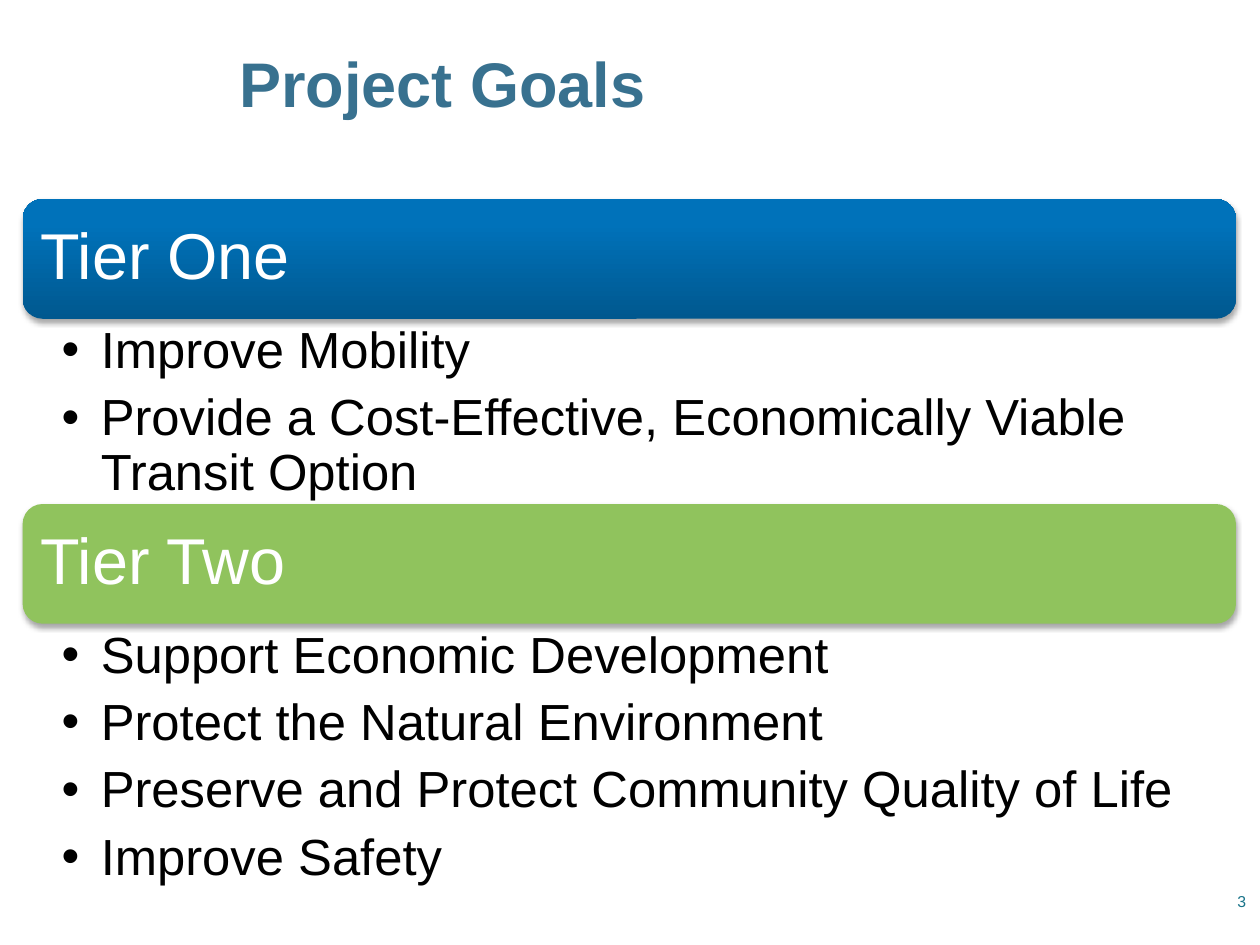
from copy import deepcopy
from dataclasses import dataclass

from lxml import etree
from pptx import Presentation
from pptx.dml.color import RGBColor
from pptx.enum.shapes import MSO_SHAPE
from pptx.enum.text import MSO_ANCHOR, MSO_AUTO_SIZE, PP_ALIGN
from pptx.oxml import parse_xml
from pptx.oxml.ns import nsdecls, qn
from pptx.util import Inches, Pt

COLORS = {
    "title": "38718F",
    "number": "19748A",
    "blue_dark": "00588F",
    "blue_mid": "0072BA",
    "blue": "0073BB",
    "green": "90C35D",
    "white": "FFFFFF",
    "black": "000000",
}
LEFT, WIDTH, BAR_HEIGHT = 0.18, 9.63, 0.95


@dataclass
class Tier:
    name: str
    top: float
    list_height: float
    fill: list[tuple[float, str]]
    goals: list[str]


TIERS = [
    Tier("Tier One", 1.58, 1.47,
         [(0, "blue_dark"), (0.8, "blue_mid"), (1, "blue")],
         ["Improve Mobility",
          "Provide a Cost-Effective, Economically Viable Transit Option"]),
    Tier("Tier Two", 4, 2.05, [(0, "green")],
         ["Support Economic Development",
          "Protect the Natural Environment",
          "Preserve and Protect Community Quality of Life",
          "Improve Safety"]),
]


def rgb(name: str) -> RGBColor:
    return RGBColor.from_string(COLORS[name])


def place(sp, left: float, top: float, width: float, height: float) -> None:
    sp.left, sp.top = Inches(left), Inches(top)
    sp.width, sp.height = Inches(width), Inches(height)


def set_frame(tf, anchor, left: float, top: float, right: float, bottom: float) -> None:
    tf.word_wrap = True
    tf.auto_size = MSO_AUTO_SIZE.NONE
    tf.vertical_anchor = anchor
    tf.margin_left, tf.margin_top = Inches(left), Inches(top)
    tf.margin_right, tf.margin_bottom = Inches(right), Inches(bottom)


def set_text(p, text: str, size: float, color: str, align=PP_ALIGN.LEFT, bold=False) -> None:
    p.text = text
    p.alignment = align
    for r in p.runs:
        r.font.name = "Arial"
        r.font.size = Pt(size)
        r.font.bold = bold
        r.font.color.rgb = rgb(color)


def fill_bar(sp, stops: list[tuple[float, str]]) -> None:
    if len(stops) == 1:
        sp.fill.solid()
        sp.fill.fore_color.rgb = rgb(stops[0][1])
        return
    sp.fill.gradient()
    sp.fill.gradient_angle = 90
    gs_list = sp._element.spPr.find(qn("a:gradFill")).find(qn("a:gsLst"))
    for _ in stops[2:]:
        gs_list.append(deepcopy(gs_list[-1]))
    for gs, (position, color) in zip(sp.fill.gradient_stops, stops):
        gs.position = position
        gs.color.rgb = rgb(color)


def add_shadow(sp) -> None:
    sp.shadow.inherit = False
    effects = sp._element.spPr.find(qn("a:effectLst"))
    effects.append(parse_xml(
        f'<a:outerShdw {nsdecls("a")} blurRad="{Pt(3.1)}" dist="{Pt(1.8)}" '
        f'dir="5400000" rotWithShape="0"><a:srgbClr val="{COLORS["black"]}">'
        '<a:alpha val="35000"/></a:srgbClr></a:outerShdw>'))


def add_bar(s, tier: Tier) -> None:
    sp = s.shapes.add_shape(MSO_SHAPE.ROUNDED_RECTANGLE, Inches(LEFT), Inches(tier.top),
                            Inches(WIDTH), Inches(BAR_HEIGHT))
    fill_bar(sp, tier.fill)
    sp.line.fill.background()
    add_shadow(sp)
    set_frame(sp.text_frame, MSO_ANCHOR.MIDDLE, 0.1, 0.1, 0.1, 0.1)
    p = sp.text_frame.paragraphs[0]
    set_text(p, tier.name, 37, "white")
    p.line_spacing = 0.9


def fill_list(sp, tier: Tier) -> None:
    place(sp, LEFT, tier.top + BAR_HEIGHT, WIDTH, tier.list_height)
    tf = sp.text_frame
    set_frame(tf, MSO_ANCHOR.TOP, 0.31, 0.05, 0.29, 0.05)
    for i, goal in enumerate(tier.goals):
        p = tf.add_paragraph() if i else tf.paragraphs[0]
        p.level = 1
        pPr = p._p.get_or_add_pPr()
        pPr.set("marL", str(Inches(0.31)))
        pPr.set("indent", str(-Inches(0.31)))
        etree.SubElement(pPr, qn("a:buChar")).set("char", "•")
        set_text(p, goal, 29, "black")
        p.line_spacing = 0.9
        p.space_before = Pt(0)
        p.space_after = Pt(7)


def main() -> None:
    prs = Presentation()
    prs.slide_width, prs.slide_height = Inches(10), Inches(7.5)
    s = prs.slides.add_slide(prs.slide_layouts[3])

    title, *lists = s.placeholders
    place(title, 1.85, 0.03, 7.87, 1.25)
    set_frame(title.text_frame, MSO_ANCHOR.MIDDLE, 0.05, 0.02, 0.02, 0.02)
    set_text(title.text_frame.paragraphs[0], "Project Goals", 36, "title", bold=True)

    for sp, tier in zip(lists, TIERS):
        add_bar(s, tier)
        fill_list(sp, tier)

    number = s.shapes.add_textbox(Inches(9.46), Inches(6.95), Inches(0.53), Inches(0.4))
    set_frame(number.text_frame, MSO_ANCHOR.MIDDLE, 0.1, 0.05, 0.1, 0.05)
    set_text(number.text_frame.paragraphs[0], "3", 9, "number", PP_ALIGN.RIGHT)

    prs.save("out.pptx")


if __name__ == "__main__":
    main()
